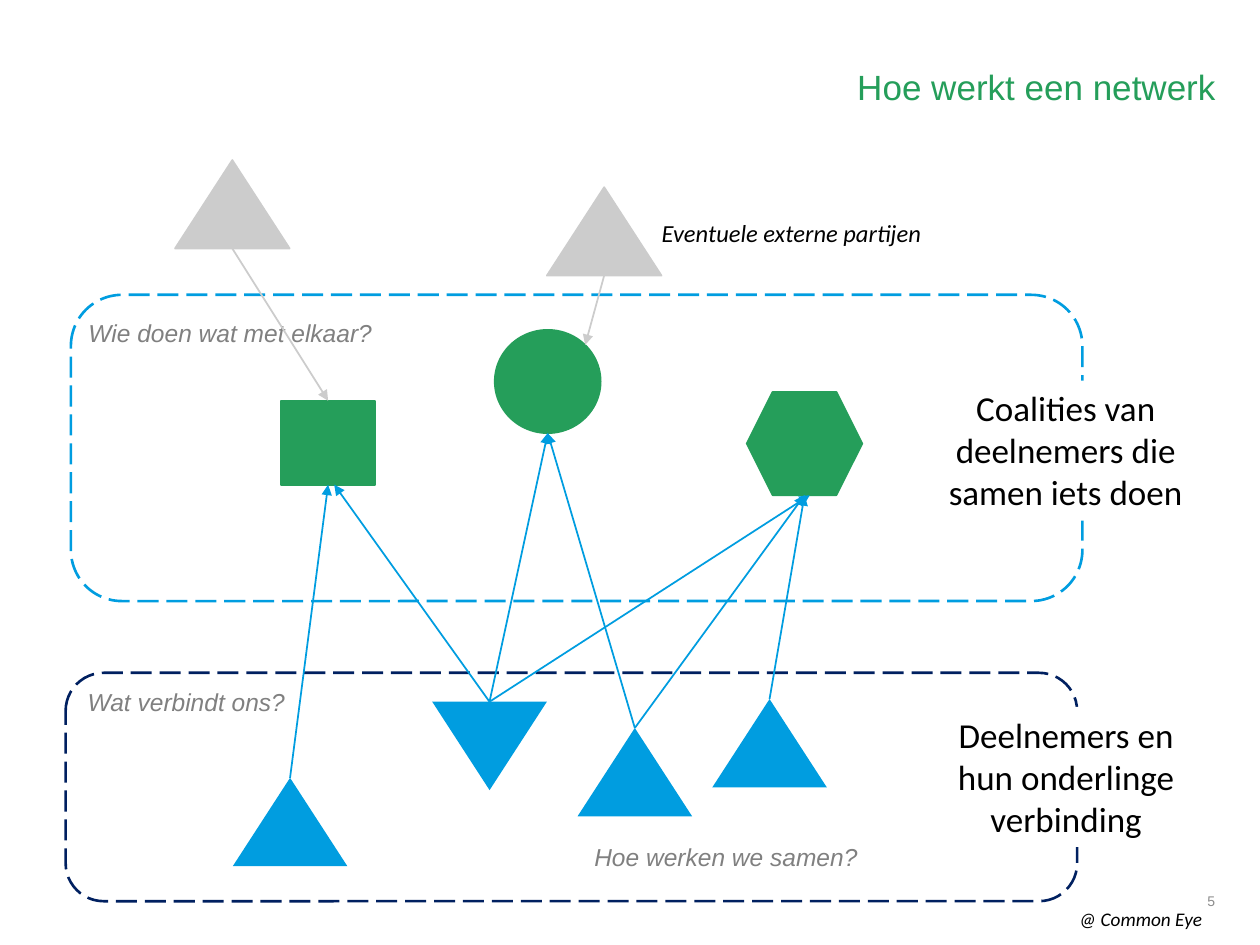
from math import sqrt

from lxml.etree import SubElement
from pptx import Presentation
from pptx.dml.color import RGBColor
from pptx.enum.dml import MSO_LINE
from pptx.enum.shapes import MSO_CONNECTOR, MSO_SHAPE as SHAPE
from pptx.enum.text import MSO_ANCHOR as ANCHOR, PP_ALIGN as ALIGN
from pptx.oxml.ns import qn
from pptx.util import Pt

GREEN = RGBColor(0x25, 0x9E, 0x5A)
BLUE = RGBColor(0x00, 0x9D, 0xE0)
NAVY = RGBColor(0x00, 0x20, 0x60)
LIGHT_GREY = RGBColor(0xCC, 0xCC, 0xCC)
MID_GREY = RGBColor(0x80, 0x80, 0x80)
NUMBER_GREY = RGBColor(0x8C, 0x8C, 0x8C)
BLACK = RGBColor(0, 0, 0)
WHITE = RGBColor(0xFF, 0xFF, 0xFF)

TITLE = {"name": "Arial", "size": Pt(20), "color": GREEN}
QUESTION = {"name": "Arial", "size": Pt(14), "italic": True, "color": MID_GREY}
LABEL = {"name": "Calibri", "size": Pt(20), "color": BLACK}
NOTE = {"name": "Calibri", "size": Pt(14), "italic": True, "color": BLACK}
CREDIT = {**NOTE, "size": Pt(11)}
NUMBER = {"name": "Arial", "size": Pt(8), "color": NUMBER_GREY}

TRIANGLE = (65.5, 50.5)


def set_text(sp, text, style, align=ALIGN.LEFT, anchor=ANCHOR.TOP, wrap=True):
    tf = sp.text_frame
    tf.word_wrap = wrap
    tf.vertical_anchor = anchor
    p = tf.paragraphs[0]
    p.alignment = align
    r = p.add_run()
    r.text = text
    for key, value in style.items():
        if key == "color":
            r.font.color.rgb = value
        else:
            setattr(r.font, key, value)
    return p


def add_text(slide, box, text, style, **options):
    sp = slide.shapes.add_textbox(*map(Pt, box))
    set_text(sp, text, style, **options)


def add_shape(slide, kind, box, fill=None, line=None, width=1):
    sp = slide.shapes.add_shape(kind, *map(Pt, box))
    sp.shadow.inherit = False
    if fill is None:
        sp.fill.background()
    else:
        sp.fill.solid()
        sp.fill.fore_color.rgb = fill
    if line is None:
        sp.line.fill.background()
    else:
        sp.line.color.rgb = line
        sp.line.width = Pt(width)
    return sp


def add_frame(slide, box, color):
    frame = add_shape(slide, SHAPE.ROUNDED_RECTANGLE, box, line=color, width=1.5)
    frame.line.dash_style = MSO_LINE.LONG_DASH


def add_label(slide, box, text):
    sp = add_shape(slide, SHAPE.RECTANGLE, box, fill=WHITE)
    set_text(sp, text, LABEL, align=ALIGN.CENTER)


def add_arrow(slide, start, end, color):
    line = slide.shapes.add_connector(MSO_CONNECTOR.STRAIGHT, *start, *end)
    line.line.color.rgb = color
    line.line.width = Pt(1)
    SubElement(line.line._get_or_add_ln(), qn("a:tailEnd"), type="triangle")
    SubElement(line._element.spPr, qn("a:effectLst"))


def top(sp):
    return sp.left + sp.width // 2, sp.top


def bottom(sp, dx=0):
    return sp.left + sp.width // 2 + Pt(dx), sp.top + sp.height


def upper_right(sp):
    """Point at 45 degrees on an ellipse."""
    return (int(sp.left + sp.width / 2 * (1 + sqrt(0.5))),
            int(sp.top + sp.height / 2 * (1 - sqrt(0.5))))


def add_heading(slide, box):
    title = slide.shapes.title
    title.left, title.top, title.width, title.height = map(Pt, box)
    p = set_text(title, "Hoe werkt een netwerk", TITLE, align=ALIGN.RIGHT)
    p.line_spacing = 0.9


def add_members(slide, box):
    x, y = box[:2]
    add_frame(slide, box, NAVY)
    spots = [(95.5, 60), (209.5, 16.5), (292.5, 31.5), (369.5, 15)]
    members = [add_shape(slide, SHAPE.ISOSCELES_TRIANGLE, (x + dx, y + dy, *TRIANGLE), BLUE)
               for dx, dy in spots]
    members[1].rotation = 180
    add_label(slide, (x + 492.5, y + 19.5, 158.5, 80),
              "Deelnemers en hun onderlinge verbinding")
    add_text(slide, (x + 5.5, y + 4.5, 139, 24.5), "Wat verbindt ons?", QUESTION)
    add_text(slide, (x + 295, y + 93, 167, 24.5), "Hoe werken we samen?", QUESTION)
    return members


def add_coalitions(slide, box):
    x, y = box[:2]
    add_frame(slide, box, BLUE)
    parts = [(SHAPE.RECTANGLE, 120, 60.5, 54, 48),
             (SHAPE.OVAL, 242.25, 20, 60.5, 59),
             (SHAPE.HEXAGON, 386.25, 55.5, 66, 59)]
    coalitions = [add_shape(slide, kind, (x + dx, y + dy, w, h), GREEN, GREEN)
                  for kind, dx, dy, w, h in parts]
    add_label(slide, (x + 476, y + 49, 185, 80),
              "Coalities van deelnemers die samen iets doen")
    add_text(slide, (x + 3, y + 9.5, 199, 24.5), "Wie doen wat met elkaar?", QUESTION)
    return coalitions


def add_external_parties(slide, box):
    x, y, w, h = box
    tw, th = TRIANGLE
    spots = [(x, y), (x + w - tw, y + h - th)]
    parties = [add_shape(slide, SHAPE.ISOSCELES_TRIANGLE, (*spot, tw, th), LIGHT_GREY, LIGHT_GREY)
               for spot in spots]
    add_text(slide, (x + 271, y + 29.5, 167, 24.5), "Eventuele externe partijen",
             NOTE, wrap=False)
    return parties


def add_links(slide, members, coalitions, parties):
    square, circle, hexagon = coalitions
    # member index, coalition, sideways shift of the arrowhead
    links = [(0, square, 0), (1, square, 3.5), (1, circle, 0), (1, hexagon, 3),
             (2, circle, 0), (2, hexagon, 0), (3, hexagon, 0)]
    for i, coalition, dx in links:
        add_arrow(slide, top(members[i]), bottom(coalition, dx), BLUE)
    for party, end in zip(parties, (top(square), upper_right(circle))):
        add_arrow(slide, bottom(party), end, LIGHT_GREY)


def add_footer(slide, box):
    x, y, w, h = box
    add_text(slide, (x, y, w, 29), "5", NUMBER, align=ALIGN.RIGHT, anchor=ANCHOR.MIDDLE)
    add_text(slide, (x + 101, y + 14.5, w - 92, h - 14.5), "@ Common Eye", CREDIT)


def main():
    prs = Presentation()
    prs.slide_width, prs.slide_height = Pt(720), Pt(540)
    slide = prs.slides.add_slide(prs.slide_layouts[5])
    add_heading(slide, (245.5, 36.5, 456.5, 96.5))
    members = add_members(slide, (37.5, 384.5, 578, 130.5))
    coalitions = add_coalitions(slide, (40.5, 168.5, 578, 175))
    parties = add_external_parties(slide, (100, 91.5, 278, 66))
    add_links(slide, members, coalitions, parties)
    add_footer(slide, (508.5, 500.5, 193, 35.5))
    prs.save("out.pptx")


if __name__ == "__main__":
    main()
